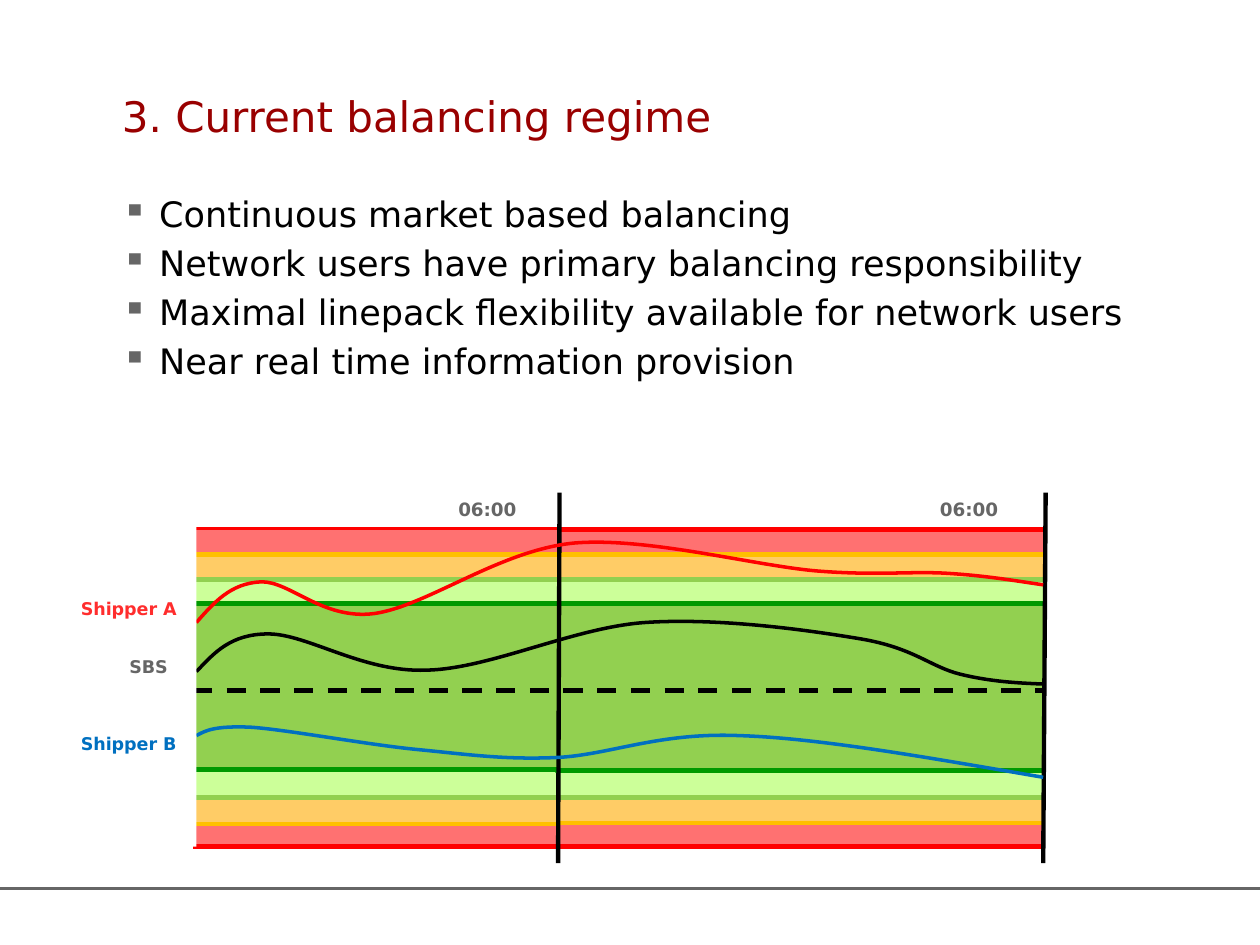
from lxml import etree
from pptx import Presentation
from pptx import util as u
from pptx.dml.color import RGBColor
from pptx.enum import dml, shapes, text
from pptx.oxml.ns import qn

HUES = {
    "title": "990000", "black": "000000", "grey": "666666", "white": "FFFFFF",
    "red": "FF0000", "rose": "FF7171", "amber": "FFC000", "peach": "FFCC66",
    "leaf": "92D050", "lime": "CCFF99", "green": "009900",
    "blue": "0070C0", "coral": "FF2D2D",
}
RECT = shapes.MSO_SHAPE.RECTANGLE
FLOW = shapes.MSO_SHAPE.FLOWCHART_PROCESS

# Zones of each gas day: colour, left, top, width, height
NEXT_ZONES = [
    ("leaf", 10.21, 12.17, 10.9, 3.35), ("rose", 10.8, 10.69, 10.41, 0.51),
    ("peach", 10.74, 11.18, 10.46, 0.51), ("lime", 10.82, 11.68, 10.29, 0.48),
    ("lime", 10.64, 15.57, 10.57, 0.51), ("peach", 10.44, 16.08, 10.77, 0.51),
    ("rose", 10.57, 16.59, 10.64, 0.51),
]
FIRST_ZONES = [
    ("rose", 3.86, 16.61, 7.37, 0.43), ("peach", 3.86, 16.05, 7.37, 0.56),
    ("rose", 3.94, 10.69, 7.37, 0.51), ("peach", 3.94, 11.15, 7.37, 0.51),
    ("lime", 3.86, 15.54, 7.34, 0.51), ("lime", 3.91, 11.66, 7.34, 0.51),
    ("leaf", 3.89, 12.17, 7.37, 3.35),
]
# Limits of each gas day: colour, start, end, height on the slide
NEXT_RIMS = [
    ("green", 10.57, 21.21, 12.17), ("amber", 10.16, 21.21, 11.18),
    ("red", 10.34, 21.21, 10.67), ("leaf", 10.95, 21.21, 11.68),
    ("green", 10.64, 21.11, 15.53), ("leaf", 10.44, 21.21, 16.08),
    ("amber", 10.31, 21.21, 16.59), ("red", 10.57, 21.11, 17.07),
]
FIRST_RIMS = [
    ("amber", 3.94, 11.3, 11.18), ("amber", 3.86, 11.2, 16.61),
    ("red", 3.89, 11.23, 17.07), ("leaf", 3.84, 11.2, 16.08),
    ("leaf", 3.89, 11.25, 11.68), ("green", 3.94, 11.23, 15.52),
    ("green", 3.89, 11.23, 12.17),
]
# Positions as chains of cubic curves
SYSTEM = [
    (3.96, 13.54), (4.32, 13.16), (4.65, 12.78), (5.41, 12.78),
    (6.2, 12.78), (7.32, 13.56), (8.59, 13.51), (9.86, 13.49),
    (11.56, 12.65), (13, 12.55), (14.48, 12.45), (16.28, 12.7),
    (17.35, 12.88), (18.42, 13.06), (18.75, 13.44), (19.35, 13.59),
    (19.96, 13.74), (20.5, 13.77), (21.03, 13.79)]
SHIP_A = [
    (3.96, 12.55), (4.32, 12.14), (4.65, 11.76), (5.26, 11.73),
    (5.84, 11.71), (6.5, 12.5), (7.54, 12.37), (8.61, 12.22),
    (10.06, 11.1), (11.56, 10.95), (13.03, 10.82), (15.19, 11.4),
    (16.46, 11.51), (17.7, 11.61), (18.36, 11.51), (19.13, 11.56),
    (19.91, 11.61), (20.47, 11.71), (21.03, 11.79)]
SHIP_B = [
    (3.96, 14.83), (4.14, 14.73), (4.32, 14.63), (5.05, 14.66),
    (5.79, 14.71), (7.39, 15.01), (8.41, 15.11), (9.45, 15.21),
    (10.16, 15.32), (11.25, 15.27), (12.32, 15.21), (13.28, 14.76),
    (14.91, 14.83), (16.54, 14.88), (18.8, 15.29), (21.03, 15.67)]


def hue(name):
    return RGBColor.from_string(HUES[name])


class Pen:
    """Holds the font and the slide being filled."""

    def __init__(self, slide, font="DejaVu Sans"):
        self.slide, self.font = slide, font

    def style(self, para, size, color, bold=False):
        form = {"name": self.font, "size": u.Pt(size), "bold": bold}
        for key, val in form.items():
            setattr(para.font, key, val)
        para.font.color.rgb = hue(color)

    def stroke(self, line, color, width):
        line.color.rgb = hue(color)
        line.width = u.Pt(width)

    def line(self, x1, y1, x2, y2, color, width, dash=None):
        link = self.slide.shapes.add_connector(
            shapes.MSO_CONNECTOR.STRAIGHT, *map(u.Cm, (x1, y1, x2, y2)))
        self.stroke(link.line, color, width)
        if dash:
            link.line.dash_style = dash
        etree.SubElement(link._element.spPr, qn("a:effectLst"))

    def band(self, color, x, y, wide, high, kind=RECT):
        box = self.slide.shapes.add_shape(
            kind, *map(u.Cm, (x, y, wide, high)))
        box.shadow.inherit = False
        box.fill.solid()
        box.fill.fore_color.rgb = hue(color)
        box.line.fill.background()

    def curve(self, knots, color):
        pts = [(u.Cm(x), u.Cm(y)) for x, y in knots]
        build = self.slide.shapes.build_freeform(*pts[0], scale=1.0)
        build.add_line_segments(pts[1:], close=False)
        wave = build.convert_to_shape()
        # Join every three segments into one cubic curve
        legs = list(wave._element.iter(qn("a:lnTo")))
        for n in range(0, len(legs), 3):
            bend = etree.Element(qn("a:cubicBezTo"))
            legs[n].addprevious(bend)
            for leg in legs[n:n + 3]:
                bend.append(leg[0])
                leg.getparent().remove(leg)
        wave.shadow.inherit = False
        wave.fill.background()
        self.stroke(wave.line, color, 2)

    def frame(self, x, y, wide, high, **form):
        box = self.slide.shapes.add_textbox(*map(u.Cm, (x, y, wide, high)))
        for key, val in {"word_wrap": True, **form}.items():
            setattr(box.text_frame, key, val)
        return box.text_frame

    def label(self, words, x, y, wide, high, size, color, bold=True, **form):
        para = self.frame(x, y, wide, high, **form).paragraphs[0]
        para.text = words
        self.style(para, size, color, bold)

    def bullets(self, items, x, y, wide, high, size, **form):
        body = self.frame(x, y, wide, high, **form)
        for n, item in enumerate(items):
            para = body.add_paragraph() if n else body.paragraphs[0]
            para.text = item
            props = para._p.get_or_add_pPr()
            props.set("marL", str(u.Cm(0.75)))
            props.set("indent", str(u.Cm(-0.75)))
            tint = etree.SubElement(props, qn("a:buClr"))
            etree.SubElement(tint, qn("a:srgbClr"), val=HUES["grey"])
            etree.SubElement(props, qn("a:buFont"), typeface="OpenSymbol")
            etree.SubElement(props, qn("a:buChar"), char="▪")
            if n:
                para.space_before = u.Pt(4)
            self.style(para, size, "black")


def main():
    deck = Presentation()
    deck.slide_width, deck.slide_height = u.Cm(25.4), u.Cm(19.05)
    pen = Pen(deck.slides.add_slide(deck.slide_layouts[6]))
    bare = dict.fromkeys(
        ("margin_left", "margin_top", "margin_right", "margin_bottom"), 0)

    # Footer rule
    pen.line(0, 17.91, 25.4, 17.91, "grey", 2)

    # Zones and limits of both gas days
    pen.line(3.94, 10.67, 11.3, 10.67, "red", 2.75)
    for zones, rims in ((NEXT_ZONES, NEXT_RIMS), (FIRST_ZONES, FIRST_RIMS)):
        for zone in zones:
            pen.band(*zone, FLOW if zone[0] == "rose" else RECT)
        for color, x1, x2, y in rims:
            pen.line(x1, y, x2, y, color, 2.75)

    # Day boundaries, zero line and the right edge trim
    pen.line(11.28, 9.93, 11.25, 17.4, "black", 2.5)
    pen.line(3.89, 13.92, 21.16, 13.92, "black", 2.75, dml.MSO_LINE.DASH)
    pen.band("white", 21.06, 10.11, 1.04, 7.57, FLOW)
    pen.line(21.08, 9.93, 21.03, 17.4, "black", 2.5)

    # Positions and the left edge trim
    for knots, color in ((SYSTEM, "black"), (SHIP_A, "red"), (SHIP_B, "blue")):
        pen.curve(knots, color)
    pen.band("white", 3.02, 10.34, 0.94, 6.73)

    # Bullets and title
    pen.bullets([
        "Continuous market based balancing",
        "Network users have primary balancing responsibility",
        "Maximal linepack flexibility available for network users",
        "Near real time information provision",
    ], 2.46, 3.89, 22.63, 13.06, 20, **bare)
    pen.label("3. Current balancing regime", 2.46, 1.11, 22.43, 2.46, 24,
              "title", False, vertical_anchor=text.MSO_ANCHOR.MIDDLE, **bare)

    # Labels
    grow = {"auto_size": text.MSO_AUTO_SIZE.SHAPE_TO_FIT_TEXT}
    for x, wide in ((8.99, 2.82), (18.7, 2.57)):
        pen.label("06:00", x, 9.92, wide, 0.81, 10.5, "grey", **grow)
    pen.label("Shipper A", 1.38, 11.94, 2.7, 0.69, 10, "coral", **grow)
    pen.label("Shipper B", 1.38, 14.66, 2.7, 0.69, 10, "blue", **grow)
    pen.label("SBS", 2.36, 13.1, 1.3, 0.69, 10, "grey",
              word_wrap=False, **grow)

    deck.save("out.pptx")


if __name__ == "__main__":
    main()
